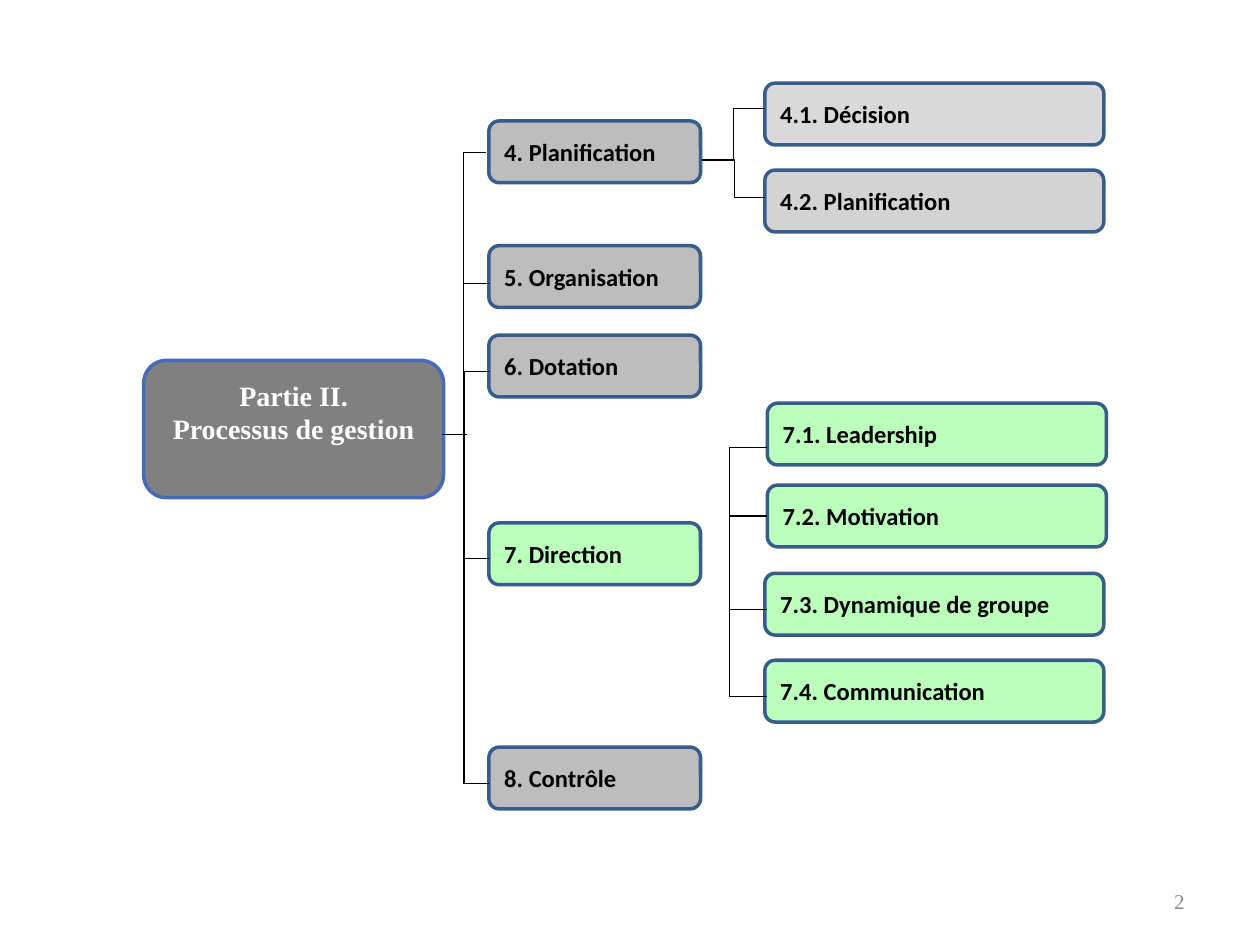
from dataclasses import dataclass
from typing import Optional

from lxml.etree import SubElement
from pptx import Presentation
from pptx.dml.color import RGBColor
from pptx.enum.shapes import MSO_CONNECTOR, MSO_SHAPE
from pptx.enum.text import MSO_ANCHOR, PP_ALIGN
from pptx.oxml.ns import qn
from pptx.util import Inches, Pt


@dataclass(frozen=True)
class Theme:
    chapter: str = "BDBDBD"
    decision: str = "D9D9D9"
    planning: str = "D3D3D3"
    highlight: str = "BCFFBC"
    root: str = "808080"
    root_border: str = "486ABB"
    border: str = "385D8A"
    connector: str = "000000"
    border_width: float = 2
    branch_width: float = 0.75
    trunk_width: float = 1


@dataclass(frozen=True)
class TextStyle:
    name: str
    size: float
    color: str
    bold: bool = True
    alignment: PP_ALIGN = PP_ALIGN.LEFT


@dataclass(frozen=True)
class Box:
    text: str
    left: float
    top: float
    width: float
    fill: str
    height: float = 0.49


@dataclass(frozen=True)
class Branch:
    y: float
    target: Optional[str] = None


THEME = Theme()
LABEL = TextStyle("Calibri", 14, "000000")
ROOT_LABEL = TextStyle("Times New Roman", 16, "FFFFFF", True, PP_ALIGN.CENTER)
PAGE_LABEL = TextStyle("Times New Roman", 12, "8C8C8C", False, PP_ALIGN.RIGHT)

CHAPTER_LEFT, CHAPTER_WIDTH = 3.88, 1.68
SECTION_LEFT, DIRECTION_LEFT, SECTION_WIDTH = 6.07, 6.09, 2.69
TRUNK_X, DIRECTION_TRUNK_X = 3.68, 5.79

ROOT = Box("Partie II.\vProcessus de gestion", 1.14, 2.86, 2.38, THEME.root, 1.09)
CHAPTERS = [
    Box(text, CHAPTER_LEFT, top, CHAPTER_WIDTH, fill)
    for text, top, fill in (
        ("4. Planification", 0.96, THEME.chapter),
        ("5. Organisation", 1.95, THEME.chapter),
        ("6. Dotation", 2.66, THEME.chapter),
        ("7. Direction", 4.15, THEME.highlight),
        ("8. Contrôle", 5.93, THEME.chapter),
    )
]
SECTIONS = [
    Box(text, left, top, SECTION_WIDTH, fill)
    for text, left, top, fill in (
        ("4.1. Décision", SECTION_LEFT, 0.66, THEME.decision),
        ("4.2. Planification", SECTION_LEFT, 1.35, THEME.planning),
        ("7.1. Leadership", DIRECTION_LEFT, 3.2, THEME.highlight),
        ("7.2. Motivation", DIRECTION_LEFT, 3.85, THEME.highlight),
        ("7.3. Dynamique de groupe", SECTION_LEFT, 4.55, THEME.highlight),
        ("7.4. Communication", SECTION_LEFT, 5.24, THEME.highlight),
    )
]
CHAPTER_BRANCHES = [Branch(2.25), Branch(2.95), Branch(4.43), Branch(6.22)]
DIRECTION_BRANCHES = [
    Branch(3.55), Branch(4.09, "7.2. Motivation"), Branch(4.84), Branch(5.53)
]


def write_text(shape, text: str, style: TextStyle) -> None:
    frame = shape.text_frame
    frame.word_wrap = True
    frame.vertical_anchor = MSO_ANCHOR.MIDDLE
    frame.text = text
    paragraph = frame.paragraphs[0]
    paragraph.alignment = style.alignment
    for run in paragraph.runs:
        formats = {"name": style.name, "size": Pt(style.size), "bold": style.bold}
        for attribute, value in formats.items():
            setattr(run.font, attribute, value)
        run.font.color.rgb = RGBColor.from_string(style.color)


def draw_box(slide, box: Box, style: TextStyle = LABEL, border: str = THEME.border):
    shape = slide.shapes.add_shape(
        MSO_SHAPE.FLOWCHART_ALTERNATE_PROCESS,
        Inches(box.left), Inches(box.top), Inches(box.width), Inches(box.height),
    )
    shape.shadow.inherit = False
    shape.fill.solid()
    shape.fill.fore_color.rgb = RGBColor.from_string(box.fill)
    shape.line.color.rgb = RGBColor.from_string(border)
    shape.line.width = Pt(THEME.border_width)
    write_text(shape, box.text, style)
    return shape


def draw_connector(slide, start: tuple, end: tuple,
                   width: float = THEME.branch_width,
                   kind: MSO_CONNECTOR = MSO_CONNECTOR.STRAIGHT):
    connector = slide.shapes.add_connector(
        kind, *(Inches(value) for value in (*start, *end))
    )
    connector.line.color.rgb = RGBColor.from_string(THEME.connector)
    connector.line.width = Pt(width)
    SubElement(connector._element.spPr, qn("a:effectLst"))
    return connector


def draw_branches(slide, branches: list[Branch], left: float, right: float,
                  shapes: dict) -> None:
    for branch in branches:
        connector = draw_connector(slide, (left, branch.y), (right, branch.y))
        if branch.target:
            connector.end_connect(shapes[branch.target], 1)
            connector.begin_y = connector.end_y


def main() -> None:
    presentation = Presentation()
    presentation.slide_width = Inches(10)
    presentation.slide_height = Inches(7.5)
    slide = presentation.slides.add_slide(presentation.slide_layouts[6])

    # Boxes of the tree
    root = draw_box(slide, ROOT, ROOT_LABEL, THEME.root_border)
    root.text_frame.margin_bottom = Inches(0.32)
    shapes = {box.text: draw_box(slide, box) for box in CHAPTERS + SECTIONS}

    # Root to chapters
    draw_connector(slide, (3.51, 3.45), (3.71, 3.45))
    draw_connector(slide, (TRUNK_X, 2.95), (TRUNK_X, 6.22), THEME.trunk_width)
    corner = draw_connector(slide, (3.86, 1.21), (TRUNK_X, 2.95),
                            kind=MSO_CONNECTOR.ELBOW)
    corner._element.spPr.find(qn("a:prstGeom")).set("prst", "bentConnector2")
    draw_branches(slide, CHAPTER_BRANCHES, TRUNK_X, CHAPTER_LEFT, shapes)

    # Chapter 4 to its sections
    for start, end in (((5.59, 1.27), (6.07, 1.57)), ((6.07, 0.86), (5.57, 1.27))):
        draw_connector(slide, start, end, kind=MSO_CONNECTOR.ELBOW)

    # Sections of chapter 7
    draw_connector(slide, (DIRECTION_TRUNK_X, 3.55), (DIRECTION_TRUNK_X, 5.53),
                   THEME.trunk_width)
    draw_branches(slide, DIRECTION_BRANCHES, DIRECTION_TRUNK_X, DIRECTION_LEFT, shapes)

    # Page number
    page_number = slide.shapes.add_textbox(
        Inches(7.17), Inches(6.95), Inches(2.33), Inches(0.4)
    )
    write_text(page_number, "2", PAGE_LABEL)

    presentation.save("out.pptx")


if __name__ == "__main__":
    main()
